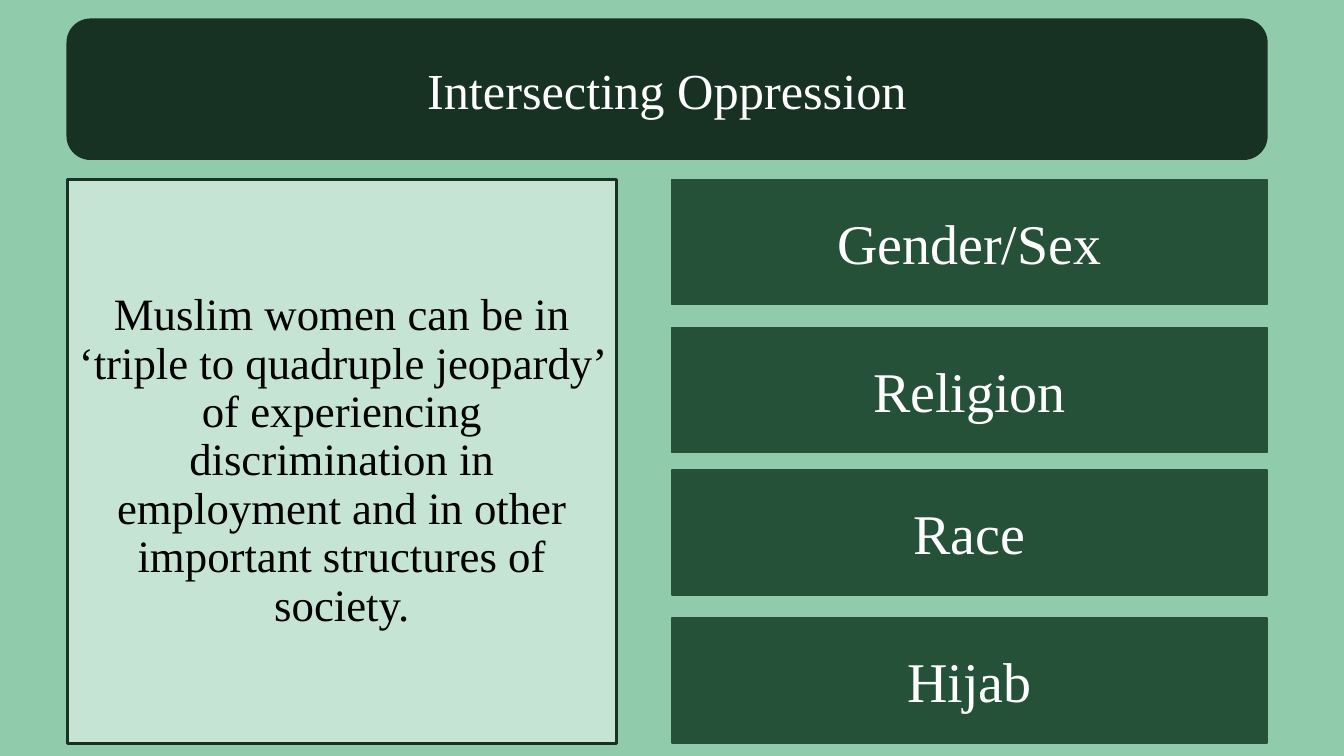
from pptx import Presentation
from pptx.dml.color import RGBColor
from pptx.enum.shapes import MSO_SHAPE
from pptx.enum.text import MSO_ANCHOR, MSO_AUTO_SIZE, PP_ALIGN
from pptx.util import Pt

COLORS = {"back": "90CCAB", "dark": "173123", "mid": "255139",
          "pale": "C6E4D4", "white": "FFFFFF", "black": "000000"}
FACTORS = ["Gender/Sex", "Religion", "Race", "Hijab"]
STATEMENT = ("Muslim women can be in ‘triple to quadruple jeopardy’ of experiencing "
             "discrimination in employment and in other important structures of society.")


def color(name):
    """Return the named colour."""
    return RGBColor.from_string(COLORS[name])


def add_panel(s, box, text, size, fill, line, ink="white", weight=1, kind=MSO_SHAPE.RECTANGLE):
    """Place a filled panel with centred text and return its text frame."""
    sp = s.shapes.add_shape(kind, *map(Pt, box))
    sp.shadow.inherit = False
    sp.fill.solid()
    sp.fill.fore_color.rgb = color(fill)
    sp.line.color.rgb = color(line)
    sp.line.width = Pt(weight)
    tf = sp.text_frame
    tf.word_wrap = True
    tf.vertical_anchor = MSO_ANCHOR.MIDDLE
    p = tf.paragraphs[0]
    p.alignment = PP_ALIGN.CENTER
    r = p.add_run()
    r.text = text
    for key, value in {"name": "Times New Roman", "size": Pt(size)}.items():
        setattr(r.font, key, value)
    r.font.color.rgb = color(ink)
    return tf


def add_title(s, box):
    """Place the rounded title banner."""
    add_panel(s, box, "Intersecting Oppression", 36, "dark", "dark",
              kind=MSO_SHAPE.ROUNDED_RECTANGLE)


def add_statement(s, box):
    """Place the outlined statement panel."""
    tf = add_panel(s, box, STATEMENT, 32, "pale", "dark", ink="black", weight=2.25)
    tf.auto_size = MSO_AUTO_SIZE.TEXT_TO_FIT_SHAPE
    tf.paragraphs[0].line_spacing = 0.9


def add_factors(s, box):
    """Stack the factor bars in two pairs that fill the box."""
    x, y, w, h = box
    bar, pitch = 89.3, 105.8
    pair = h - bar - pitch
    for i, text in enumerate(FACTORS):
        top = y + i // 2 * pair + i % 2 * pitch
        add_panel(s, (x, top, w, bar), text, 40, "mid", "mid")


def main():
    """Build and save the slide."""
    prs = Presentation()
    prs.slide_width, prs.slide_height = Pt(960), Pt(540)
    s = prs.slides.add_slide(prs.slide_layouts[6])
    s.background.fill.solid()
    s.background.fill.fore_color.rgb = color("back")
    left, top, width, height = 48, 128.2, 857, 402.6
    add_title(s, (left, 13.7, width, 100.1))
    add_statement(s, (left, top, 392.4, height))
    add_factors(s, (480, top, left + width - 480, height))
    prs.save("out.pptx")


if __name__ == "__main__":
    main()
